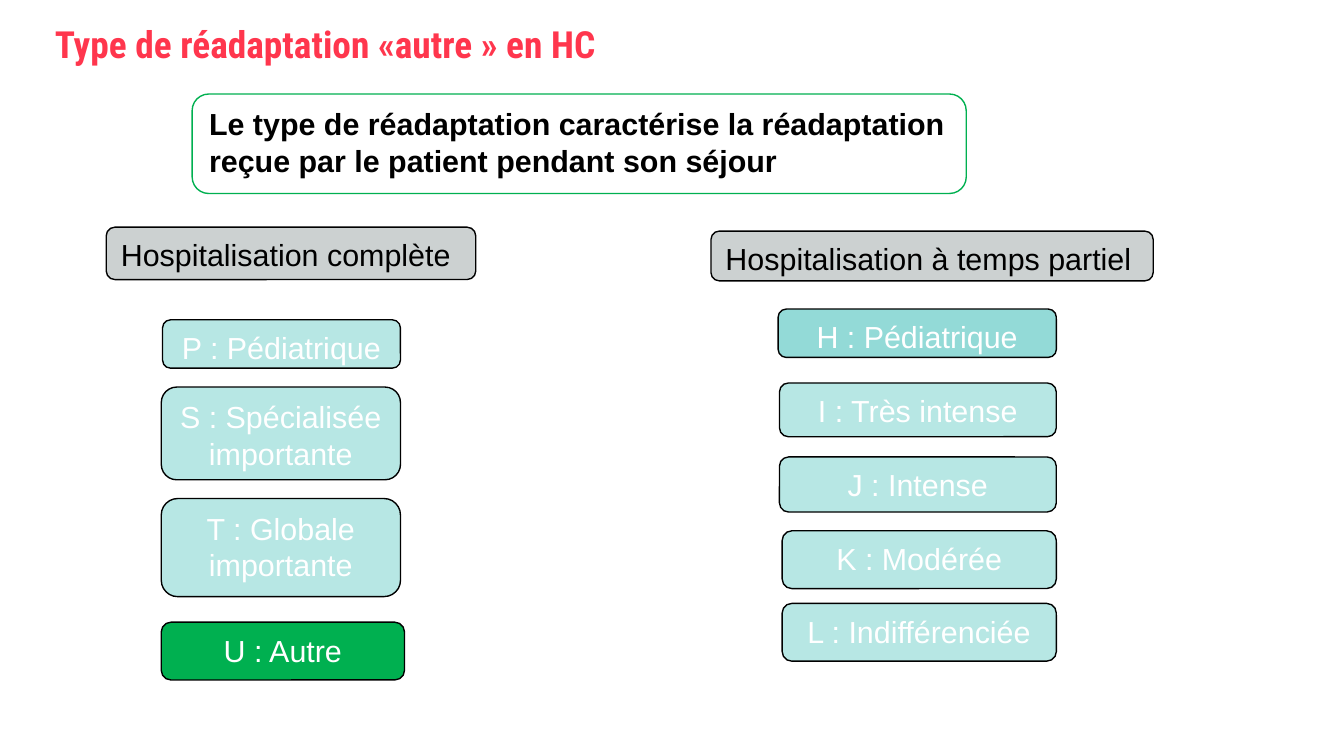
"""Build the slide on rehabilitation types by kind of hospital stay."""
from pptx import Presentation
from pptx.dml.color import RGBColor
from pptx.enum.shapes import MSO_SHAPE
from pptx.enum.text import MSO_ANCHOR, PP_ALIGN
from pptx.util import Inches, Pt

ROUNDED = MSO_SHAPE.ROUNDED_RECTANGLE
TOP = MSO_ANCHOR.TOP
LEFT, CENTER = PP_ALIGN.LEFT, PP_ALIGN.CENTER

COLORS = {
    "title": "FF364D",
    "green": "00B050",
    "grey": "CCD1D1",
    "aqua": "B7E7E4",
    "teal": "93DAD7",
    "black": "000000",
    "white": "FFFFFF",
}

HEADINGS = [
    ("Hospitalisation complète", 0.79, 1.69, 2.75, 0.39),
    ("Hospitalisation à temps partiel", 5.29, 1.72, 3.29, 0.37),
]

TYPES = [
    ("P : Pédiatrique", 1.21, 2.38, 1.77, 0.36, "aqua"),
    ("S : Spécialisée importante", 1.2, 2.88, 1.78, 0.69, "aqua"),
    ("T : Globale importante", 1.2, 3.71, 1.78, 0.73, "aqua"),
    ("U : Autre", 1.2, 4.63, 1.81, 0.43, "green"),
    ("H : Pédiatrique", 5.79, 2.3, 2.07, 0.36, "teal"),
    ("I : Très intense", 5.8, 2.85, 2.06, 0.4, "aqua"),
    ("J : Intense", 5.8, 3.4, 2.06, 0.41, "aqua"),
    ("K : Modérée", 5.82, 3.95, 2.04, 0.43, "aqua"),
    ("L : Indifférenciée", 5.82, 4.49, 2.04, 0.43, "aqua"),
]


def rgb(name):
    """Return the named colour."""
    return RGBColor.from_string(COLORS[name])


def add_span(para, text, color, size=16.3, font="Arial", bold=False):
    """Add one styled run to a paragraph."""
    span = para.add_run()
    span.text = text
    span.font.name = font
    span.font.size = Pt(size)
    span.font.bold = bold
    span.font.color.rgb = rgb(color)


def add_title(page, text):
    """Add the slide title."""
    box = page.shapes.add_textbox(Inches(0.31), Inches(0), Inches(9.61), Inches(0.5))
    box.text_frame.word_wrap = True
    para = box.text_frame.paragraphs[0]
    para.line_spacing = Pt(31.8)
    add_span(para, text, "title", 20, "Roboto Condensed", True)


def add_box(page, lines, place, fill=None, line="black", color="black",
            align=LEFT, bold=False):
    """Add a rounded box with one paragraph per line."""
    box = page.shapes.add_shape(ROUNDED, *map(Inches, place))
    box.shadow.inherit = False
    if fill:
        box.fill.solid()
        box.fill.fore_color.rgb = rgb(fill)
    else:
        box.fill.background()
    box.line.color.rgb = rgb(line)
    box.line.width = Pt(0.75)
    frame = box.text_frame
    frame.word_wrap = True
    frame.vertical_anchor = TOP
    frame.margin_left = frame.margin_right = Inches(0.09)
    frame.margin_top = frame.margin_bottom = Inches(0.05)
    for index, text in enumerate(lines):
        para = frame.add_paragraph() if index else frame.paragraphs[0]
        para.alignment = align
        add_span(para, text, color, bold=bold)


def main():
    """Build and save the deck."""
    deck = Presentation()
    deck.slide_width = Inches(10)
    deck.slide_height = Inches(10 * 9 / 16)
    page = deck.slides.add_slide(deck.slide_layouts[6])
    add_title(page, "Type de réadaptation «autre » en HC")
    definition = ["Le type de réadaptation caractérise la réadaptation",
                  "reçue par le patient pendant son séjour"]
    add_box(page, definition, (1.43, 0.7, 5.76, 0.74), line="green", bold=True)
    for text, *place in HEADINGS:
        add_box(page, [text], place, "grey")
    for text, *place, fill in TYPES:
        add_box(page, [text], place, fill, color="white", align=CENTER)
    deck.save("out.pptx")


if __name__ == "__main__":
    main()
